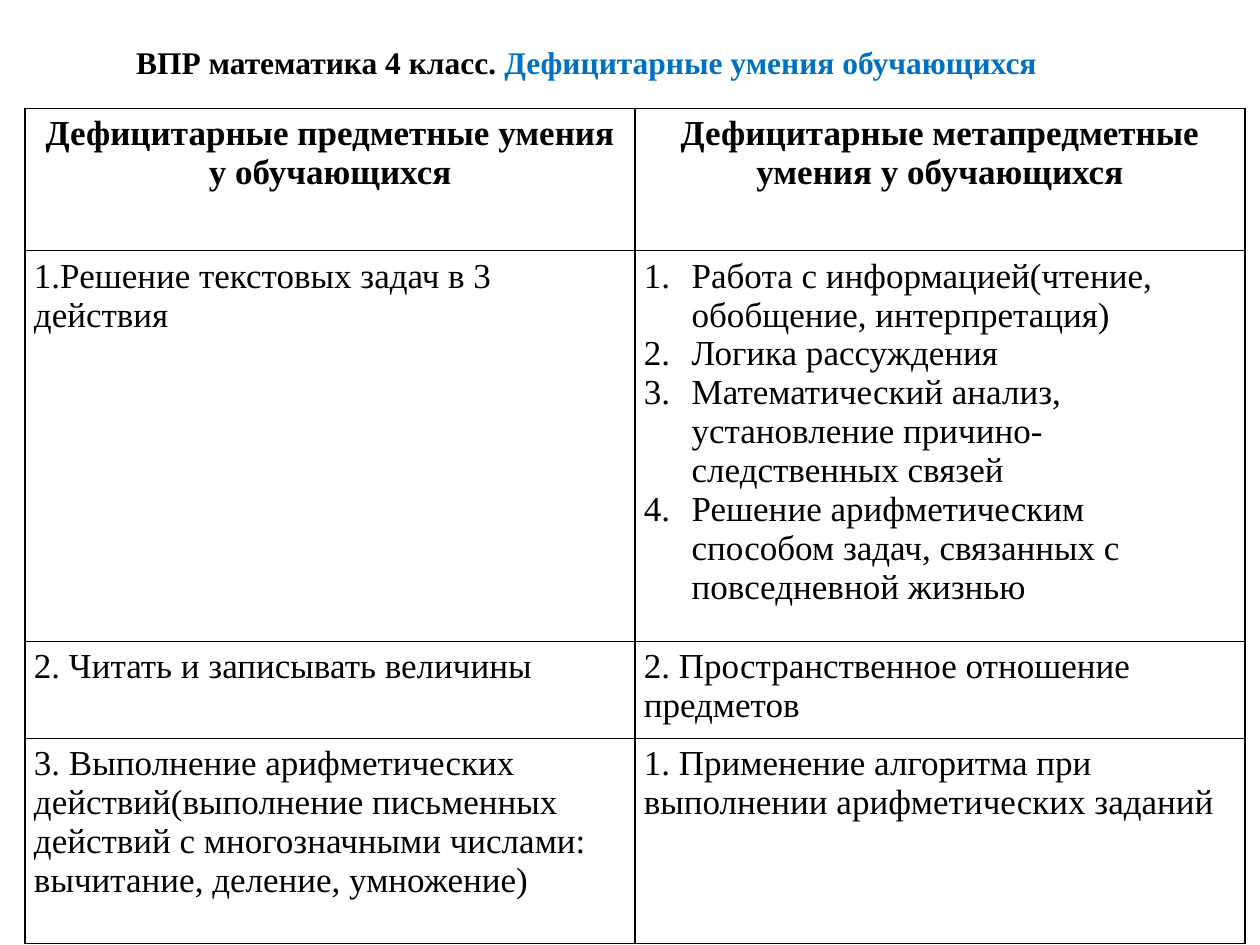
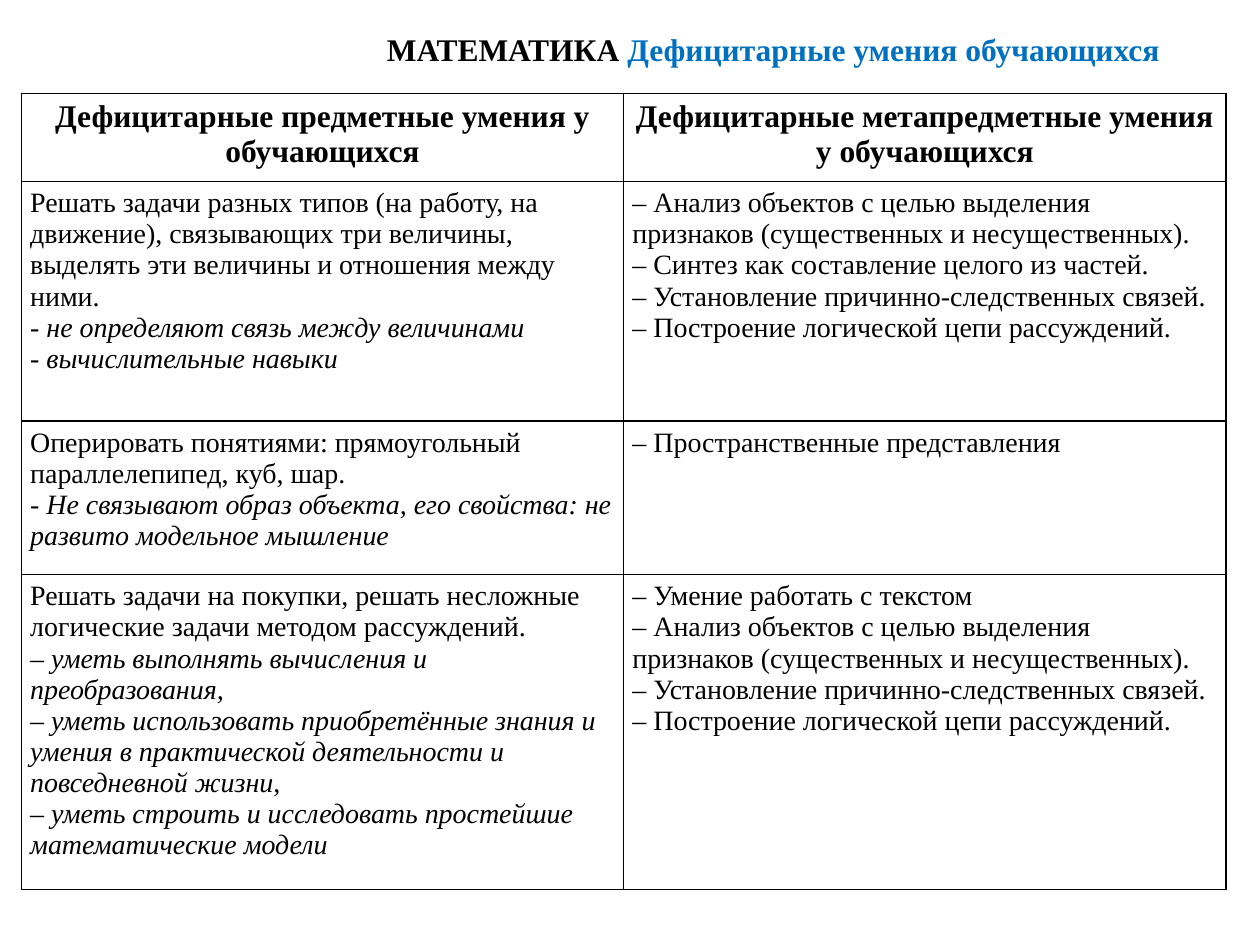
"""Build two slides with tables of pupils' deficient skills in mathematics."""
from dataclasses import dataclass

from lxml import etree
from pptx import Presentation, util as u
from pptx.dml.color import RGBColor
from pptx.enum import text
from pptx.oxml import ns

FONT = "Times New Roman"
BLACK, BLUE = "000000", "0070C0"
TITLE_SIZE = 18
TITLE_END = "Дефицитарные умения обучающихся"
HEADERS = (
    "Дефицитарные предметные умения у обучающихся",
    "Дефицитарные метапредметные умения у обучающихся",
)
ANALYSIS = "– Анализ объектов с целью выделения признаков (существенных и несущественных)."
CAUSES = "– Установление причинно-следственных связей."
REASONING = "– Построение логической цепи рассуждений."


@dataclass
class Line:
    """Hold one paragraph of a table cell."""
    words: str
    bold: bool = False
    italic: bool = False
    mark: str = ""


def colour(value):
    """Return the colour for a hex string."""
    return RGBColor.from_string(value)


def apply(target, formats):
    """Set every attribute in a dict of format values."""
    for name, value in formats.items():
        setattr(target, name, value)


def add_span(para, words, size, ink=BLACK, bold=False, italic=False):
    """Add a formatted run to a paragraph."""
    span = para.add_run()
    span.text = words
    apply(span.font, {"name": FONT, "size": u.Pt(size), "bold": bold, "italic": italic})
    span.font.color.rgb = colour(ink)


def add_title(page, opening, left, top, width):
    """Fill the title placeholder with a black opening and the blue ending."""
    box = page.shapes.title
    apply(box, {"left": u.Inches(left), "top": u.Inches(top),
                "width": u.Inches(width), "height": u.Inches(0.4)})
    apply(box.text_frame, {"word_wrap": True, "auto_size": text.MSO_AUTO_SIZE.NONE,
                           "vertical_anchor": text.MSO_ANCHOR.TOP})
    para = box.text_frame.paragraphs[0]
    para.alignment = text.PP_ALIGN.LEFT
    add_span(para, opening + " ", TITLE_SIZE, bold=True)
    add_span(para, TITLE_END, TITLE_SIZE, BLUE, bold=True)


def add_mark(para, mark):
    """Give a paragraph automatic numbers or a bullet character."""
    numbered = mark == "1."
    indent = u.Inches(0.38) if numbered else 0
    properties = para._p.get_or_add_pPr()
    properties.set("marL", str(indent))
    properties.set("indent", str(-indent))
    etree.SubElement(properties, ns.qn("a:buFont"), typeface=FONT)
    if numbered:
        etree.SubElement(properties, ns.qn("a:buAutoNum"), type="arabicPeriod")
    else:
        etree.SubElement(properties, ns.qn("a:buChar"), char=mark)


def add_borders(cell):
    """Draw a thin black line on each side of a cell."""
    properties = cell._tc.get_or_add_tcPr()
    for index, side in enumerate("LRTB"):
        line = etree.Element(ns.qn(f"a:ln{side}"), w=str(u.Pt(1)))
        fill = etree.SubElement(line, ns.qn("a:solidFill"))
        etree.SubElement(fill, ns.qn("a:srgbClr"), val=BLACK)
        properties.insert(index, line)


def fill_cell(cell, lines, size, align):
    """Write lines into a cell and format it."""
    apply(cell, {"margin_left": u.Inches(0.07), "margin_right": u.Inches(0.07),
                 "margin_top": u.Inches(0.05), "margin_bottom": u.Inches(0.05)})
    cell.fill.background()
    add_borders(cell)
    frame = cell.text_frame
    for index, line in enumerate(lines):
        para = frame.add_paragraph() if index else frame.paragraphs[0]
        para.alignment = align
        if line.mark:
            add_mark(para, line.mark)
        add_span(para, line.words, size, bold=line.bold, italic=line.italic)


def add_skill_table(page, left, top, column, heights, sizes, rows):
    """Add a two-column table with a header row and rows of skills."""
    head_size, body_size = sizes
    frame = page.shapes.add_table(
        len(heights), len(HEADERS), u.Inches(left), u.Inches(top),
        u.Inches(column * len(HEADERS)), u.Inches(sum(heights)))
    table = frame.table
    apply(table, {"first_row": False, "horz_banding": False})
    for row, height in zip(table.rows, heights):
        row.height = u.Inches(height)
    for index, header in enumerate(HEADERS):
        fill_cell(table.cell(0, index), [Line(header, bold=True)],
                  head_size, text.PP_ALIGN.CENTER)
    for number, row in enumerate(rows, 1):
        for index, lines in enumerate(row):
            fill_cell(table.cell(number, index), lines, body_size, text.PP_ALIGN.LEFT)


def plain(*sentences):
    """Return lines without marks."""
    return [Line(words) for words in sentences]


def italic(*sentences, mark=""):
    """Return italic lines."""
    return [Line(words, italic=True, mark=mark) for words in sentences]


def numbered(*sentences):
    """Return automatically numbered lines."""
    return [Line(words, mark="1.") for words in sentences]


GRADE_FOUR = [
    (plain("1.Решение текстовых задач в 3 действия"),
     numbered("Работа с информацией(чтение, обобщение, интерпретация)",
              "Логика рассуждения",
              "Математический анализ, установление причино-следственных связей",
              "Решение арифметическим способом задач, связанных с повседневной жизнью")),
    (plain("2. Читать и записывать величины"),
     plain("2. Пространственное отношение предметов")),
    (plain("3. Выполнение арифметических действий(выполнение письменных действий "
           "с многозначными числами: вычитание, деление, умножение)"),
     plain("1. Применение алгоритма при выполнении арифметических заданий")),
]
MATHEMATICS = [
    (plain("Решать задачи разных типов (на работу, на движение), связывающих три величины, "
           "выделять эти величины и отношения между ними.")
     + italic(" не определяют связь между величинами", " вычислительные навыки", mark="-"),
     plain(ANALYSIS, "– Синтез как составление целого из частей.", CAUSES, REASONING)),
    (plain("Оперировать понятиями: прямоугольный параллелепипед, куб, шар.")
     + italic("- Не связывают образ объекта, его свойства: не развито модельное мышление"),
     plain("– Пространственные представления")),
    (plain("Решать задачи на покупки, решать несложные логические задачи методом рассуждений.")
     + italic("– уметь выполнять вычисления и преобразования,",
              "– уметь использовать приобретённые знания и умения в практической "
              "деятельности и повседневной жизни,",
              "– уметь строить и исследовать простейшие математические модели"),
     plain("– Умение работать с текстом", ANALYSIS, CAUSES, REASONING)),
]


def main():
    """Build and save the deck."""
    deck = Presentation()
    apply(deck, {"slide_width": u.Inches(10), "slide_height": u.Inches(7.5)})
    layout = deck.slide_layouts.get_by_name("Title Only")

    page = deck.slides.add_slide(layout)
    add_title(page, "ВПР математика 4 класс.", 0.98, 0.29, 7.42)
    add_skill_table(page, 0.2, 0.86, 4.84, (1.13, 3.1, 0.77, 1.63), (20, 20), GRADE_FOUR)

    page = deck.slides.add_slide(layout)
    add_title(page, "МАТЕМАТИКА", 2.97, 0.19, 6.46)
    add_skill_table(page, 0.17, 0.74, 4.78, (0.7, 1.9, 1.22, 2.5), (18, 16), MATHEMATICS)

    deck.save("out.pptx")


if __name__ == "__main__":
    main()
